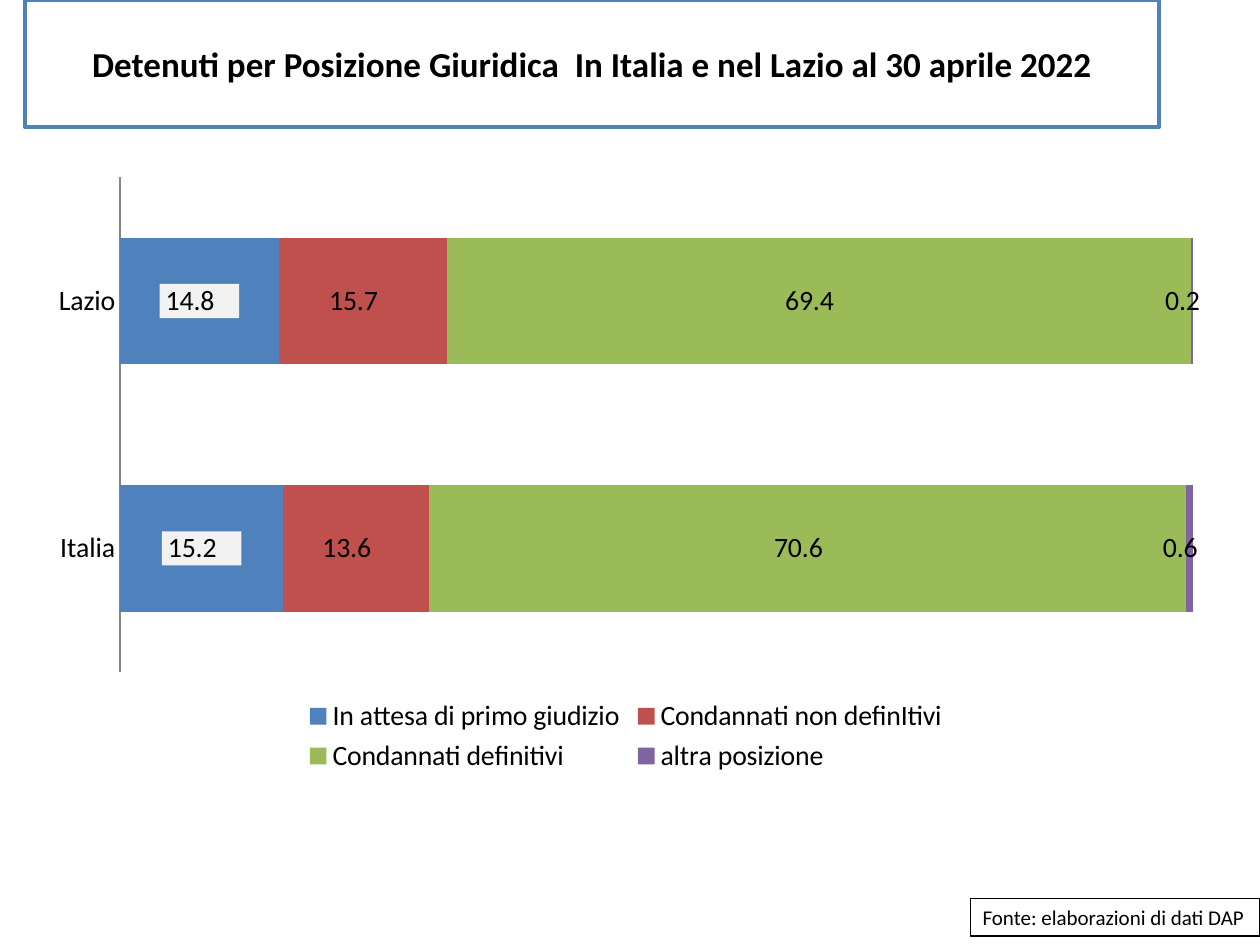
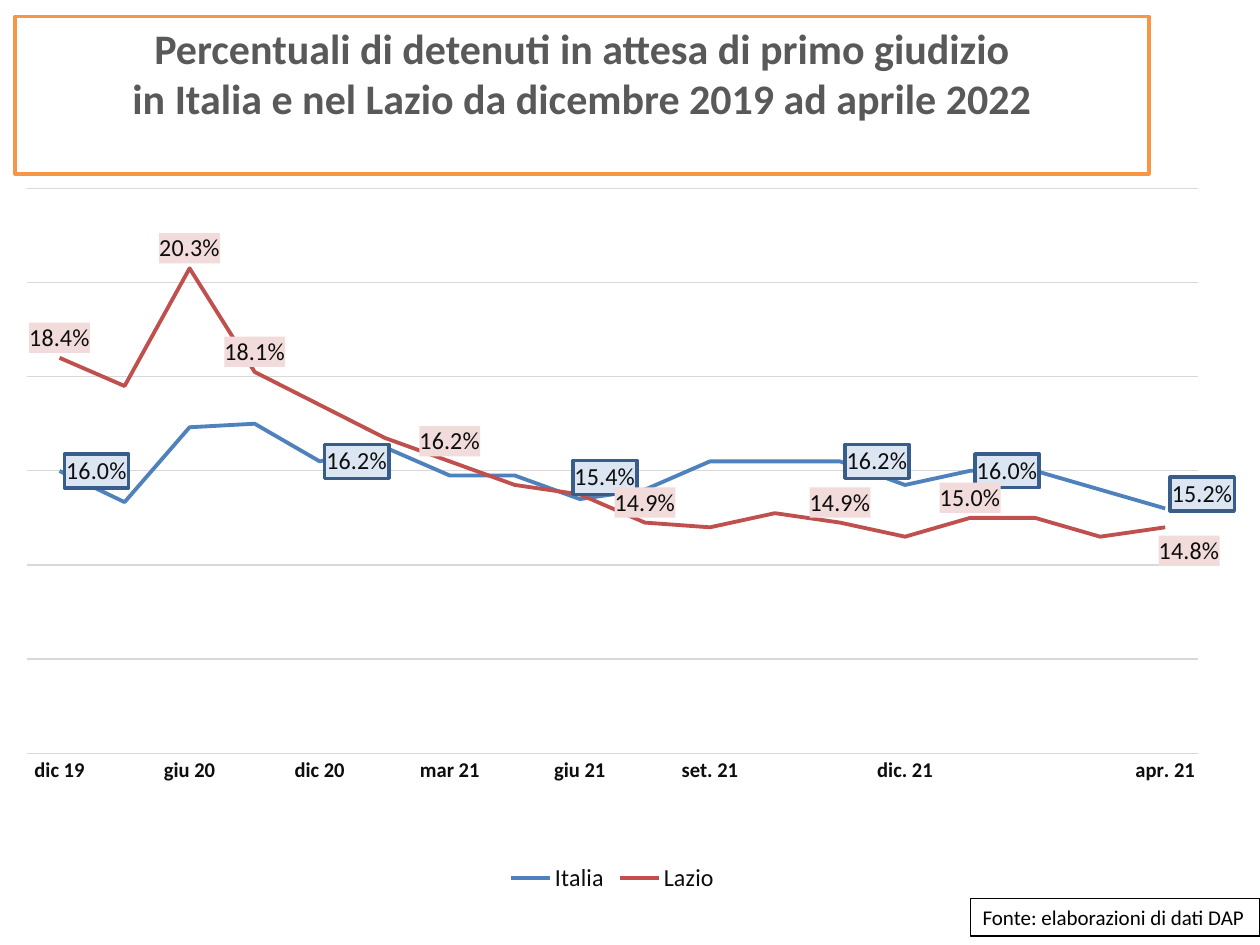
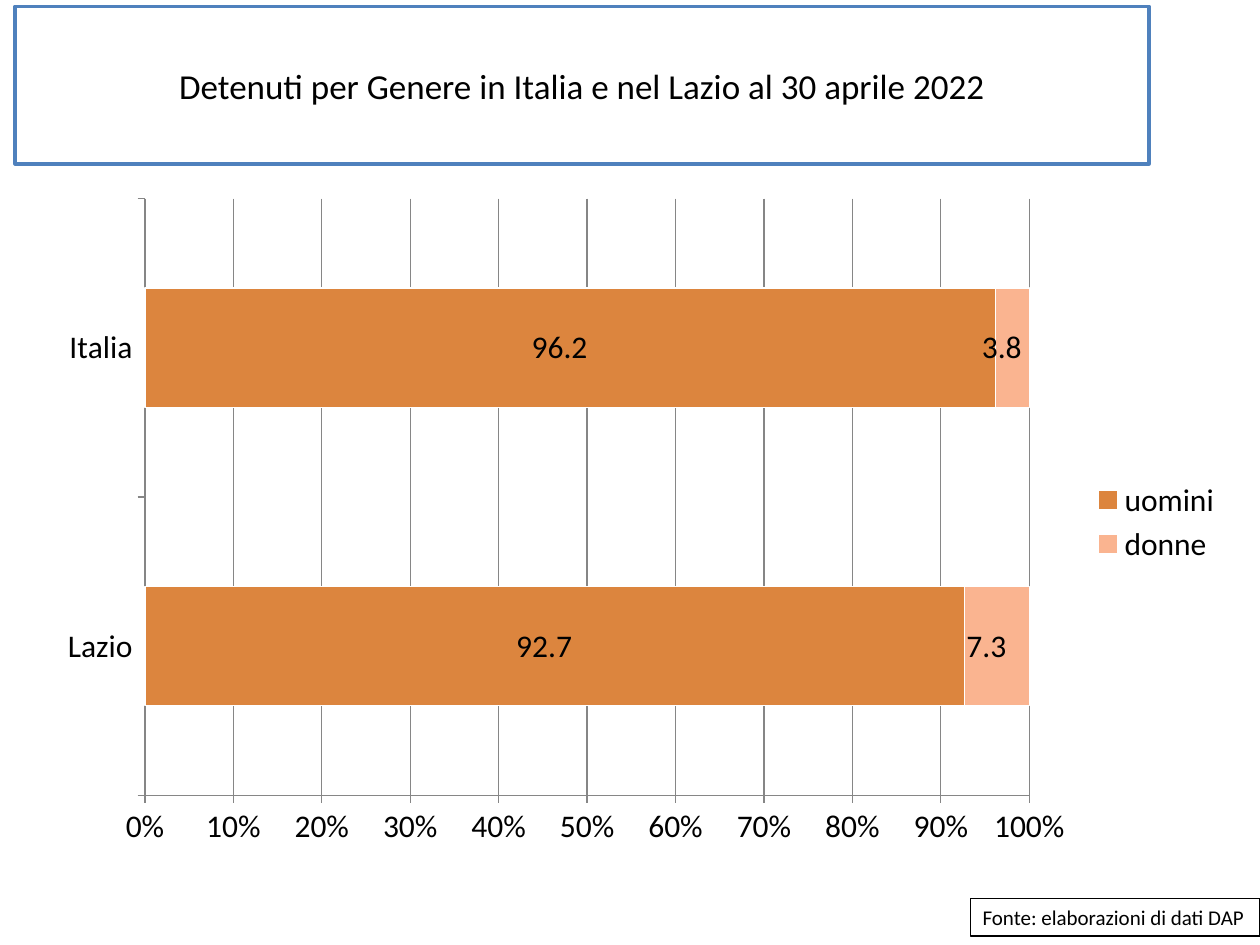
from dataclasses import dataclass

from pptx import Presentation
from pptx.chart.data import CategoryChartData
from pptx.dml.color import RGBColor
from pptx.enum.chart import XL_CHART_TYPE, XL_LEGEND_POSITION, XL_TICK_MARK
from pptx.enum.shapes import MSO_SHAPE
from pptx.enum.text import MSO_ANCHOR, PP_ALIGN
from pptx.oxml import parse_xml
from pptx.oxml.ns import nsdecls, qn
from pptx.util import Inches, Pt

BAR, LINE = XL_CHART_TYPE.BAR_STACKED_100, XL_CHART_TYPE.LINE
BOTTOM, RIGHT = XL_LEGEND_POSITION.BOTTOM, XL_LEGEND_POSITION.RIGHT
NO_TICK, TICK_OUT = XL_TICK_MARK.NONE, XL_TICK_MARK.OUTSIDE
LEFT, CENTER = PP_ALIGN.LEFT, PP_ALIGN.CENTER
TOP, MIDDLE = MSO_ANCHOR.TOP, MSO_ANCHOR.MIDDLE
RECT = MSO_SHAPE.RECTANGLE


@dataclass(frozen=True)
class Theme:
    font: str = "Calibri"
    black: str = "000000"
    white: str = "FFFFFF"
    ink: str = "0D0D0D"
    gray: str = "595959"
    axis: str = "868686"
    grid: str = "D9D9D9"
    blue: str = "4F81BD"
    red: str = "C0504D"
    green: str = "9BBB59"
    purple: str = "8064A2"
    orange: str = "F79646"
    men: str = "DC853E"
    women: str = "FAB490"
    label_gray: str = "F2F2F2"
    label_blue: str = "DCE6F2"
    label_red: str = "F2DCDB"
    label_edge: str = "385D8A"
    title: int = 20
    big_title: int = 24
    source: int = 12


T = Theme()
ACCOUNTING = (r'_-* #,##0.0\ _€_-;\-* #,##0.0\ _€_-;'
              r'_-* "-"??\ _€_-;_-@_-')
PERCENT = "0.0%"


def rgb(color):
    return RGBColor.from_string(color)


def set_font(font, size, color, bold=False):
    font.name, font.size, font.bold = T.font, Pt(size), bold
    font.color.rgb = rgb(color)


def set_line(line, color, width=0.75):
    line.color.rgb = rgb(color)
    line.width = Pt(width)


def add_text(tf, text, size=12, color=T.black, bold=False, align=LEFT,
             anchor=TOP, wrap=True):
    tf.word_wrap, tf.vertical_anchor = wrap, anchor
    p = tf.paragraphs[0]
    p.text, p.alignment = text, align
    for r in p.runs:
        set_font(r.font, size, color, bold)


def add_box(s, box, text, edge, width, **text_format):
    sp = s.shapes.add_shape(RECT, *map(Inches, box))
    sp.shadow.inherit = False
    sp.fill.solid()
    sp.fill.fore_color.rgb = rgb(T.white)
    set_line(sp.line, edge, width)
    add_text(sp.text_frame, text, **text_format)


def add_title(s, text, top, height, left=0.12, edge=T.blue, **text_format):
    style = dict(size=T.title, align=CENTER, anchor=MIDDLE) | text_format
    add_box(s, (left, top, 9, height), text, edge, 2, **style)


def add_source(s):
    add_box(s, (7.7, 7.13, 2.3, 0.3), "Fonte: elaborazioni di dati DAP",
            T.black, 0.75, size=T.source, wrap=False)


def add_chart(s, kind, box, cats, series, size, legend, color=T.black):
    """Add a chart; series holds (name, values, colour) for each series."""
    data = CategoryChartData()
    data.categories = cats
    for name, values, _ in series:
        data.add_series(name, values)
    chart = s.shapes.add_chart(kind, *map(Inches, box), data).chart
    set_font(chart.font, size, color)
    chart.has_title = False
    chart.has_legend = True
    chart.legend.position = legend
    chart.legend.include_in_layout = False
    for axis in (chart.category_axis, chart.value_axis):
        axis.minor_tick_mark = NO_TICK
        axis.has_major_gridlines = False
        set_line(axis.format.line, T.axis)
    for ser, (_, _, fill) in zip(chart.plots[0].series, series):
        if kind == LINE:
            ser.smooth = False
            set_line(ser.format.line, fill, 2.25)
        else:
            ser.format.fill.solid()
            ser.format.fill.fore_color.rgb = rgb(fill)
    return chart


def add_bar_chart(s, box, cats, series, size, legend, gap):
    chart = add_chart(s, BAR, box, cats, series, size, legend)
    plot = chart.plots[0]
    plot.vary_by_categories = False
    plot.gap_width, plot.overlap = gap, 100
    chart.value_axis.minimum_scale = 0
    for ser in plot.series:
        add_labels(ser, ACCOUNTING, "ctr")
    return chart


def solid(color):
    return f'<a:solidFill><a:srgbClr val="{color}"/></a:solidFill>'


def add_labels(ser, fmt, pos, fill=None, edge=None, points=None):
    """Label all points, or only points: {index: (x, y) shift in chart parts}."""
    code = fmt.replace('"', "&quot;")
    look = solid(fill) if fill else "<a:noFill/>"
    if edge:
        look += f'<a:ln w="{Pt(2)}">{solid(edge)}</a:ln>'

    def flags(shown):
        return "".join(f'<c:show{name} val="{int(shown and name == "Val")}"/>'
                       for name in ("LegendKey", "Val", "CatName", "SerName",
                                    "Percent", "BubbleSize"))

    body = (f'<c:numFmt formatCode="{code}" sourceLinked="0"/>'
            f'<c:spPr>{look}</c:spPr><c:dLblPos val="{pos}"/>')
    single = ""
    for i, (x, y) in sorted((points or {}).items()):
        layout = (f'<c:layout><c:manualLayout><c:x val="{x}"/><c:y val="{y}"/>'
                  '</c:manualLayout></c:layout>') if x or y else ""
        single += (f'<c:dLbl><c:idx val="{i}"/>{layout}{body}'
                   f'{flags(True)}</c:dLbl>')
    labels = parse_xml(f'<c:dLbls {nsdecls("c", "a")}>{single}{body}'
                       f'{flags(points is None)}</c:dLbls>')
    ser._element.find(qn("c:cat")).addprevious(labels)


def set_plot_area(chart, x, y, w, h):
    area = chart._chartSpace.chart.plotArea
    for old in area.findall(qn("c:layout")):
        area.remove(old)
    sizes = "".join(f'<c:{k} val="{v}"/>'
                    for k, v in zip("xywh", (x, y, w, h)))
    area.insert(0, parse_xml(
        f'<c:layout {nsdecls("c")}><c:manualLayout>'
        '<c:layoutTarget val="inner"/><c:xMode val="edge"/>'
        f'<c:yMode val="edge"/>{sizes}</c:manualLayout></c:layout>'))


def legal_status_slide(s):
    add_title(s, "Detenuti per Posizione Giuridica  In Italia e nel Lazio "
              "al 30 aprile 2022", 0, 1.01, left=0.2, bold=True)
    add_source(s)
    series = [("In attesa di primo giudizio", (14.8, 15.2), T.blue),
              ("Condannati non definItivi", (15.7, 13.6), T.red),
              ("Condannati definitivi", (69.4, 70.6), T.green),
              ("altra posizione", (0.2, 0.6), T.purple)]
    chart = add_bar_chart(s, (0.28, 1.31, 9.44, 4.87), ("Lazio", "Italia"),
                          series, 16, BOTTOM, 95)
    chart.category_axis.reverse_order = True
    chart.category_axis.major_tick_mark = NO_TICK
    chart.value_axis.visible = False
    first = chart.plots[0].series[0]
    first._element.remove(first._element.find(qn("c:dLbls")))
    add_labels(first, ACCOUNTING, "ctr", fill=T.label_gray)


def awaiting_trial_slide(s):
    add_title(s, "Percentuali di detenuti in attesa di primo giudizio\v"
              "in Italia e nel Lazio da dicembre 2019 ad aprile 2022",
              0.13, 1.25, edge=T.orange, size=T.big_title, color=T.gray,
              bold=True, anchor=TOP)
    add_source(s)
    named = {0: "apr. 21", 4: "dic. 21", 7: "set. 21", 9: "giu 21",
             11: "mar 21", 13: "dic 20", 15: "giu 20", 17: "dic 19"}
    cats = [named.get(i, "") for i in range(18)]
    italia = (0.152, 0.156, 0.16, 0.16, 0.157, 0.162, 0.162, 0.162, 0.156,
              0.154, 0.159, 0.159, 0.165, 0.162, 0.17, 0.169245, 0.153355,
              0.159966)
    lazio = (0.148, 0.146, 0.15, 0.15, 0.146, 0.149, 0.151, 0.148, 0.149,
             0.155, 0.157, 0.162, 0.167, 0.174, 0.181, 0.203, 0.178, 0.184)
    chart = add_chart(s, LINE, (0.12, 1.38, 9.69, 5.75), cats,
                      [("Italia", italia, T.blue), ("Lazio", lazio, T.red)],
                      14, BOTTOM, T.ink)
    set_plot_area(chart, 0.01, 0.02, 0.98, 0.78)
    months, shares = chart.category_axis, chart.value_axis
    months.reverse_order = True
    months.major_tick_mark = NO_TICK
    set_font(months.tick_labels.font, 12, T.ink, bold=True)
    set_line(months.format.line, T.grid)
    shares.visible = False
    shares.minimum_scale, shares.maximum_scale = 0.1, 0.22
    shares.major_unit = 0.02
    shares.has_major_gridlines = True
    set_line(shares.major_gridlines.format.line, T.grid)
    italia_line, lazio_line = chart.plots[0].series
    at_point = (0, 0)
    add_labels(italia_line, PERCENT, "r", T.label_blue, T.label_edge,
               dict.fromkeys((3, 5, 13, 17), at_point)
               | {0: (0, -0.02), 9: (-0.01, -0.03)})
    add_labels(lazio_line, PERCENT, "t", T.label_red, None,
               dict.fromkeys((3, 5, 8, 11, 14, 15, 17), at_point)
               | {0: (0.02, 0.06)})


def gender_slide(s):
    add_title(s, "Detenuti per Genere in Italia e nel Lazio al 30 aprile 2022",
              0.05, 1.25)
    add_source(s)
    chart = add_bar_chart(s, (0.35, 1.47, 9.45, 5.35), ("Lazio", "Italia"),
                          [("uomini", (92.7, 96.2), T.men),
                           ("donne", (7.3, 3.8), T.women)], 18, RIGHT, 150)
    for ser in chart.plots[0].series:
        set_line(ser.format.line, T.white)
    shares = chart.value_axis
    for axis in (chart.category_axis, shares):
        axis.major_tick_mark = TICK_OUT
    shares.has_major_gridlines = True
    set_line(shares.major_gridlines.format.line, T.axis)
    shares.tick_labels.number_format = "0%"
    shares.tick_labels.number_format_is_linked = False


def main():
    prs = Presentation()
    prs.slide_width, prs.slide_height = Inches(10), Inches(7.5)
    blank = prs.slide_layouts[6]
    for build in (legal_status_slide, awaiting_trial_slide, gender_slide):
        build(prs.slides.add_slide(blank))
    prs.save("out.pptx")


if __name__ == "__main__":
    main()
